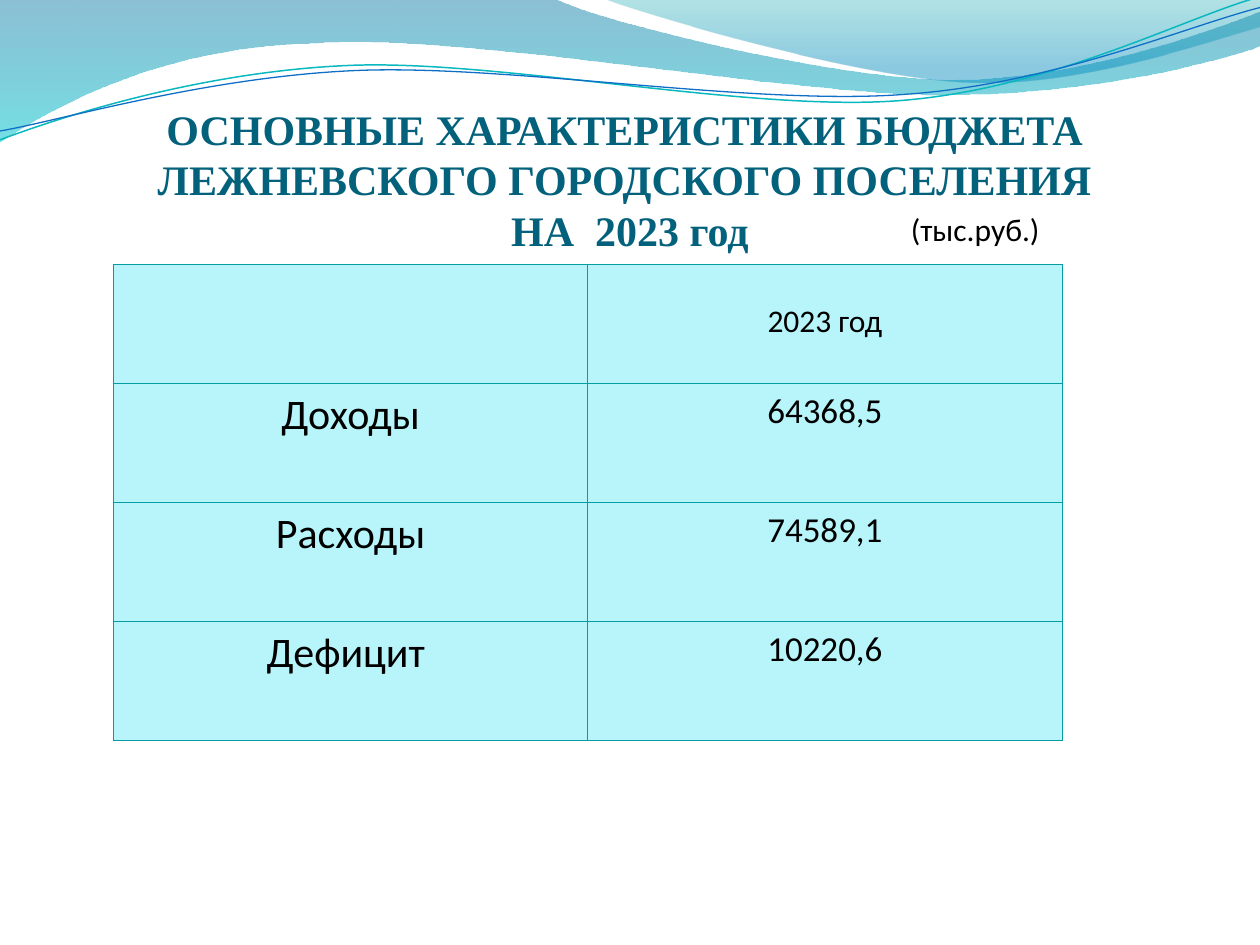
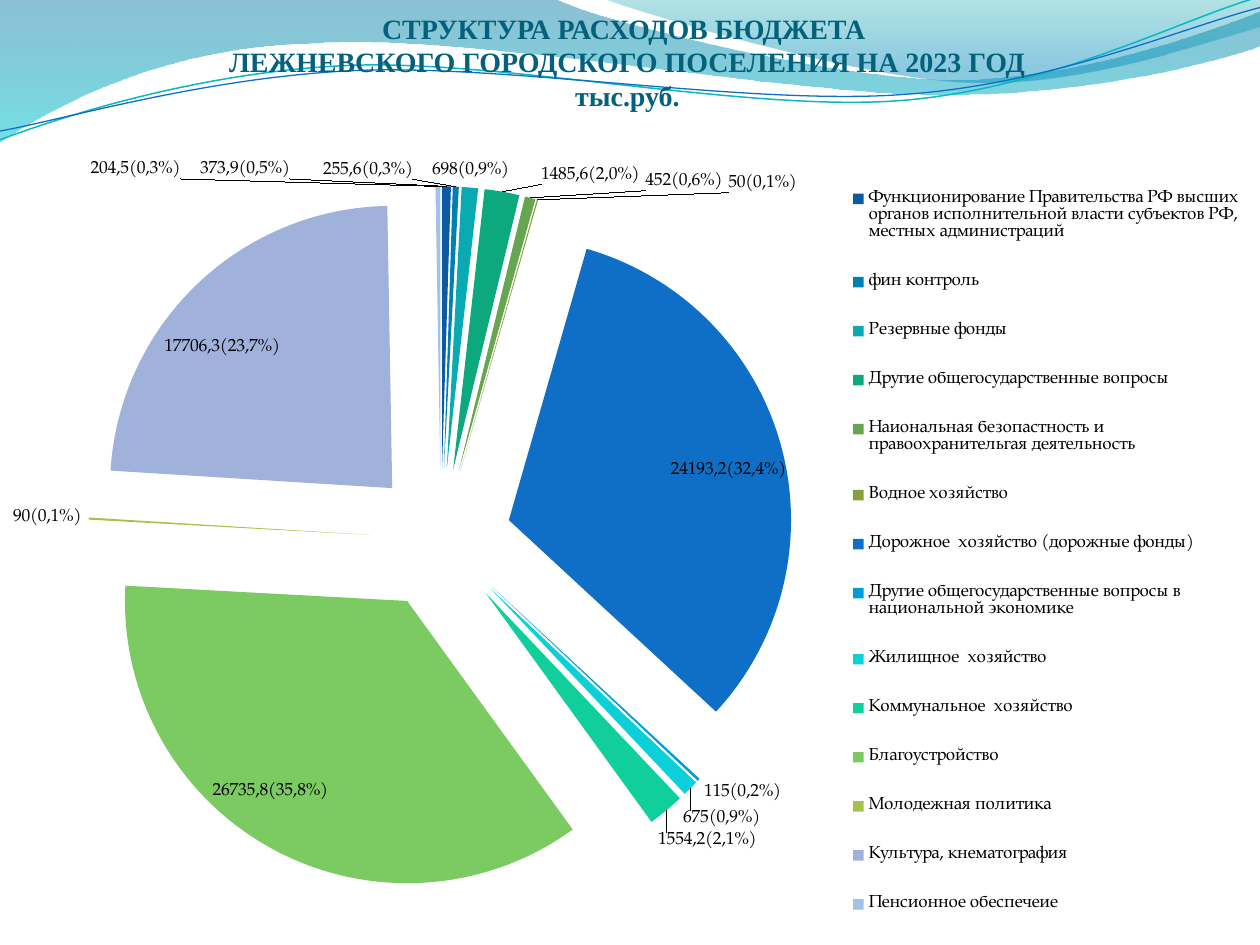
from copy import deepcopy

from lxml import etree
from pptx import Presentation
from pptx.chart.data import CategoryChartData as Data
from pptx.dml.color import RGBColor
from pptx.enum.chart import XL_CHART_TYPE as Kind, XL_LABEL_POSITION as Spot
from pptx.enum.chart import XL_LEGEND_POSITION as Side
from pptx.enum.text import MSO_ANCHOR as Anchor, PP_ALIGN as Align
from pptx.oxml.ns import qn
from pptx.util import Inches, Pt

# Shared look
TITLE = dict(name="Times New Roman", bold=True, color="04617B")
BODY = dict(name="Calibri", color="000000")
SMALL = dict(name="TeX Gyre Pagella", size=10, color="000000")
EDGE, CELL = "069CA3", "B8F5FB"

# Waves: a start, then corners (x, y) or curves (two handles and an end)
BANDS = [
    ([(0, 0), (4.4, -0.01), (4.76, 0.17, 6.64, 0.63, 7.58, 0.63),
      (8.53, 0.63, 9.58, 0.26, 10, 0.09), (10.01, 0.36),
      (9.83, 0.44, 8.7, 0.76, 7.46, 0.75),
      (6.22, 0.75, 3.82, 0.28, 2.57, 0.34),
      (1.29, 0.36, 0.46, 0.83, -0.01, 1.13)],
     [(0, "0074A1", 45), (1, "00C6CF", 55)]),
    ([(4.79, -0.01), (5.09, 0.11, 6.82, 0.62, 7.69, 0.65),
      (8.56, 0.69, 9.61, 0.32, 10, 0.21), (10, 0)],
     [(0, "00A1A9", 30), (0.8, "008BBF", 45)]),
]
LINES = [
    ([(0, 1.11), (0.48, 0.93, 1.58, 0.57, 2.77, 0.52),
      (3.95, 0.47, 5.93, 0.89, 7.13, 0.8),
      (8.33, 0.71, 9.38, 0.15, 9.98, -0.02)], "0AB8BF", 0.85),
    ([(0, 1.04), (0.47, 0.96, 1.64, 0.61, 2.83, 0.56),
      (4.03, 0.51, 5.97, 0.84, 7.17, 0.75),
      (8.36, 0.67, 9.41, 0.21, 10, 0.06)], "0F6FC6", 0.75),
]

# Slide content
BUDGET = [("", "2023 год"), ("Доходы", "64368,5"),
          ("Расходы", "74589,1"), ("Дефицит ", "10220,6")]

# Name, value, share, slice colour, label shift (parts of the chart)
COSTS = [
    ("Функционирование Правительства РФ высших органов исполнительной "
     "власти субъектов РФ, местных администраций",
     373.9, "0,5", "0B5AA2", (-0.16, 0)),
    ("фин контроль", 255.6, "0,3", "0080B2", (-0.07, 0)),
    ("Резервные фонды", 698, "0,9", "09AAB2", None),
    ("Другие общегосударственные вопросы",
     1485.6, "2,0", "0DA97E", (0.03, 0)),
    ("Наиональная безопастность и правоохранительгая деятельность",
     452, "0,6", "65A651", (0.09, 0)),
    ("Водное хозяйство", 50, "0,1", "87A03B", (0.15, 0)),
    ("Дорожное  хозяйство (дорожные фонды)",
     24193.2, "32,4", "0F6FC6", (0.01, 0.02)),
    ("Другие общегосударственные вопросы в национальной экономике",
     115, "0,2", "009DD9", None),
    ("Жилищное  хозяйство", 675, "0,9", "0BD0D9", (-0.01, 0.02)),
    ("Коммунальное  хозяйство", 1554.2, "2,1", "10CF9B", (-0.01, 0.02)),
    ("Благоустройство", 26735.8, "35,8", "7CCA62", (-0.05, -0.05)),
    ("Молодежная политика", 90, "0,1", "A5C249", None),
    ("Культура, кнематография", 17706.3, "23,7", "A0B1DC", (-0.03, 0.06)),
    ("Пенсионное обеспечеие", 204.5, "0,3", "9FC4E7", (-0.24, 0)),
]


def rgb(code):
    return RGBColor.from_string(code)


def style(font, look):
    for key, val in look.items():
        if key == "color":
            font.color.rgb = rgb(val)
        else:
            setattr(font, key, Pt(val) if key == "size" else val)


def sub(node, tag, **attrs):
    return etree.SubElement(node, qn(tag), attrs)


# Waves
def add_path(slide, marks, close):
    marks = [tuple(map(Inches, mark)) for mark in marks]
    ends = [mark[-2:] for mark in marks]
    pen = slide.shapes.build_freeform(*ends[0], scale=1)
    pen.add_line_segments(ends[1:], close=close)
    shape = pen.convert_to_shape()
    shape.shadow.inherit = False
    left, top = (min(axis) for axis in zip(*ends))
    steps = list(shape._element.spPr.iter(qn("a:lnTo")))
    for step, mark in zip(steps, marks[1:]):
        if len(mark) == 6:
            curve = etree.Element(qn("a:cubicBezTo"))
            for x, y in zip(mark[::2], mark[1::2]):
                sub(curve, "a:pt", x=str(x - left), y=str(y - top))
            step.getparent().replace(step, curve)
    return shape


def add_waves(slide):
    for marks, stops in BANDS:
        band = add_path(slide, marks, True)
        band.line.fill.background()
        band.fill.gradient()
        band.fill.gradient_angle = 270
        for stop, (pos, code, _) in zip(band.fill.gradient_stops, stops):
            stop.position = pos
            stop.color.rgb = rgb(code)
        tints = list(band._element.spPr.iter(qn("a:srgbClr")))
        for tint, (_, _, alpha) in zip(tints, stops):
            sub(tint, "a:alpha", val=str(alpha * 1000))
    for marks, code, width in LINES:
        line = add_path(slide, marks, False)
        line.fill.background()
        line.line.color.rgb = rgb(code)
        line.line.width = Pt(width)


# Text
def write(para, text, look):
    para.text = text
    for run in para.runs:
        style(run.font, look)
    for gap in para._p.findall(qn("a:br")):
        gap.insert(0, deepcopy(para.runs[0]._r.rPr))


def add_text(slide, box, text, look):
    frame = slide.shapes.add_textbox(*map(Inches, box)).text_frame
    frame.word_wrap = True
    write(frame.paragraphs[0], text, look)
    return frame


def add_title(slide, box, text, size):
    frame = add_text(slide, box, text, dict(TITLE, size=size))
    form = dict(margin_left=0, margin_top=Inches(0.05), margin_right=0,
                margin_bottom=0, vertical_anchor=Anchor.BOTTOM)
    for key, val in form.items():
        setattr(frame, key, val)
    frame.paragraphs[0].alignment = Align.CENTER


# Table
def add_edges(cell):
    props = cell._tc.get_or_add_tcPr()
    for n, side in enumerate(("lnL", "lnR", "lnT", "lnB")):
        edge = etree.Element(qn("a:" + side), w=str(Pt(0.75)))
        sub(sub(edge, "a:solidFill"), "a:srgbClr", val=EDGE)
        props.insert(n, edge)


def add_grid(slide, box, rows):
    shape = slide.shapes.add_table(len(rows), len(rows[0]), *map(Inches, box))
    table = shape.table
    table.first_row = table.horz_banding = False
    for r, row in enumerate(rows):
        for c, text in enumerate(row):
            cell = table.cell(r, c)
            cell.fill.solid()
            cell.fill.fore_color.rgb = rgb(CELL)
            add_edges(cell)
            if r == 0:
                cell.margin_top = Inches(0.3)
            if text:
                para = cell.text_frame.paragraphs[0]
                para.alignment = Align.CENTER
                size = 18 if r == 0 else 20 if c else 24
                write(para, text, dict(BODY, size=size))


# Chart
def set_layout(node, box, after=None):
    old = node.find(qn("c:layout"))
    if old is not None:
        node.remove(old)
    lay = etree.Element(qn("c:layout"))
    man = sub(lay, "c:manualLayout")
    if len(box) == 4:
        for tag in ("xMode", "yMode"):
            sub(man, "c:" + tag, val="edge")
    for tag, val in zip("xywh", box):
        sub(man, "c:" + tag, val=str(val))
    if after:
        node.find(qn(after)).addnext(lay)
    else:
        node.insert(0, lay)


def add_label(point, value, share, shift):
    label = point.data_label
    text = f"{value}({share}%)".replace(".", ",")
    write(label.text_frame.paragraphs[0], text, SMALL)
    label.position = Spot.INSIDE_END if value > 10000 else Spot.OUTSIDE_END
    if shift:
        set_layout(label._dLbl, shift, "c:idx")


def add_pie(slide, box, costs):
    data = Data()
    data.categories = [cost[0] for cost in costs]
    data.add_series("Series 1", [cost[1] for cost in costs])
    chart = slide.shapes.add_chart(Kind.PIE, *map(Inches, box), data).chart
    chart.has_title = False
    style(chart.font, SMALL)
    chart.has_legend = True
    chart.legend.position = Side.RIGHT
    chart.legend.include_in_layout = False
    set_layout(chart.legend._element, (0.67, 0.06, 0.32, 0.94), "c:legendPos")
    plot = chart.plots[0]
    plot.vary_by_categories = True
    set_layout(plot._element.getparent(), (0.07, 0.09, 0.56, 0.85))
    pie = plot.series[0]
    pie.data_labels.show_value = True
    burst = etree.Element(qn("c:explosion"), val="25")
    pie._element.find(qn("c:tx")).addnext(burst)
    for n, (_, value, share, code, shift) in enumerate(costs):
        point = pie.points[n]
        point.format.fill.solid()
        point.format.fill.fore_color.rgb = rgb(code)
        add_label(point, value, share, shift)


def main():
    deck = Presentation()
    deck.slide_width, deck.slide_height = Inches(10), Inches(7.5)
    first, second = (deck.slides.add_slide(deck.slide_layouts[6])
                     for _ in range(2))
    for slide in (first, second):
        add_waves(slide)

    # Budget totals
    add_title(first, (0.5, 0.77, 9, 1.25),
              "ОСНОВНЫЕ ХАРАКТЕРИСТИКИ БЮДЖЕТА \v"
              "ЛЕЖНЕВСКОГО ГОРОДСКОГО ПОСЕЛЕНИЯ \vНА  2023 год", 24)
    add_grid(first, (0.9, 2.1, 7.53, 3.78), BUDGET)
    add_text(first, (7.13, 1.62, 1.81, 0.4), "(тыс.руб.)",
             dict(BODY, size=18))

    # Spending by area
    add_title(second, (0.55, 0, 8.86, 0.89),
              "СТРУКТУРА РАСХОДОВ БЮДЖЕТА \v"
              "ЛЕЖНЕВСКОГО ГОРОДСКОГО ПОСЕЛЕНИЯ НА 2023 ГОД\vтыс.руб.", 16)
    add_pie(second, (0, 0.86, 10, 6.64), COSTS)
    deck.save("out.pptx")


if __name__ == "__main__":
    main()
